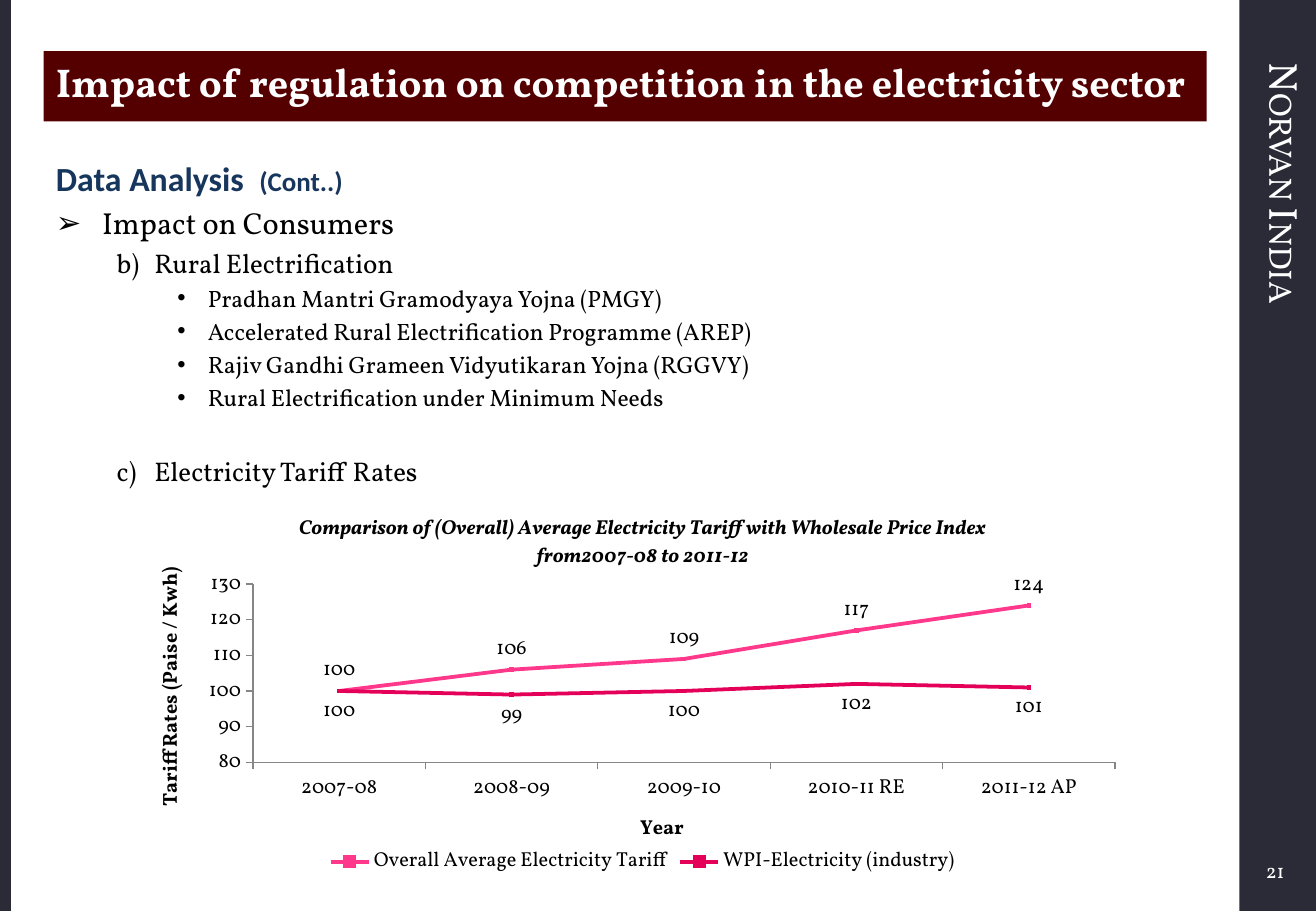
from dataclasses import dataclass

from lxml.etree import SubElement
from pptx import Presentation
from pptx.chart.data import CategoryChartData
from pptx.dml.color import RGBColor
from pptx.enum.chart import (XL_CHART_TYPE, XL_LABEL_POSITION, XL_LEGEND_POSITION,
                             XL_MARKER_STYLE, XL_TICK_MARK)
from pptx.enum.shapes import MSO_SHAPE
from pptx.enum.text import MSO_ANCHOR, MSO_AUTO_SIZE, PP_ALIGN
from pptx.oxml import parse_xml
from pptx.oxml.ns import nsdecls, qn
from pptx.util import Inches, Pt


@dataclass(frozen=True)
class Theme:
    font: str = "Vollkorn"
    heading_font: str = "Calibri"
    ink: RGBColor = RGBColor(0, 0, 0)
    white: RGBColor = RGBColor(255, 255, 255)
    bar: RGBColor = RGBColor(0x2B, 0x2B, 0x37)
    banner: RGBColor = RGBColor(0x54, 0, 0)
    heading: RGBColor = RGBColor(0x17, 0x36, 0x5D)
    axis: RGBColor = RGBColor(0x86, 0x86, 0x86)
    tariff: RGBColor = RGBColor(0xFF, 0x38, 0x8C)
    wholesale: RGBColor = RGBColor(0xE4, 0, 0x59)
    brand_size: float = 24
    title_size: float = 23.8
    heading_size: float = 20
    cont_size: float = 16
    level_sizes: tuple = (18, 16, 14)
    small_size: float = 12


THEME = Theme()

BRAND = "Norvan India"
PAGE = "21"
TITLE = "Impact of regulation on competition in the electricity sector"
HEADING, CONT = "Data Analysis  ", "(Cont..)"
OUTLINE = [  # level, bullet, text
    (0, "➢", "Impact on Consumers"),
    (1, None, "b)\tRural Electrification"),
    (2, "•", "Pradhan Mantri Gramodyaya Yojna (PMGY)"),
    (2, "•", "Accelerated Rural Electrification Programme (AREP)"),
    (2, "•", "Rajiv Gandhi Grameen Vidyutikaran Yojna (RGGVY)"),
    (2, "•", "Rural Electrification under Minimum Needs"),
    (1, None, "c)\tElectricity Tariff Rates"),
]
LEVEL_INDENTS = [(0.38, 0.38), (0.81, 0.31), (1.25, 0.25)]  # margin, hanging
SECTION_GAP = 25.5  # points above a section that follows a deeper list

CHART_TITLE = ("Comparison of (Overall) Average Electricity Tariff "
               "with Wholesale Price Index from2007-08 to 2011-12")
YEARS = ["2007-08", "2008-09", "2009-10", "2010-11 RE", "2011-12 AP"]
SERIES = [
    ("Overall Average Electricity Tariff", [100, 106, 109, 117, 124],
     THEME.tariff, XL_LABEL_POSITION.ABOVE),
    ("WPI-Electricity (industry)", [100, 99, 100, 102, 101],
     THEME.wholesale, XL_LABEL_POSITION.BELOW),
]
PLOT_AREA = {"x": 0.103, "y": 0.23, "w": 0.878, "h": 0.463}

WIDTH, HEIGHT = 10.83, 7.5
SIDEBAR, LEFT_STRIP = 0.63, 0.09
CONTENT_LEFT, CONTENT_WIDTH = 0.36, 9.57


def inches(*lengths):
    return [Inches(length) for length in lengths]


def style(font, size, color=THEME.ink, bold=False, italic=False, name=THEME.font):
    font.name, font.size = name, Pt(size)
    font.bold, font.italic = bold, italic
    font.color.rgb = color


def add_run(paragraph, text, *args, **kwargs):
    run = paragraph.add_run()
    run.text = text
    style(run.font, *args, **kwargs)
    return run


def set_bullet(paragraph, level, bullet):
    """Indent the paragraph for its level and give it a bullet, or none."""
    margin, hanging = LEVEL_INDENTS[level]
    paragraph.level = level
    properties = paragraph._p.get_or_add_pPr()
    properties.set("marL", str(Inches(margin)))
    properties.set("indent", str(-Inches(hanging)))
    if bullet:
        SubElement(properties, qn("a:buChar")).set("char", bullet)
    else:
        SubElement(properties, qn("a:buNone"))


def place(placeholder, top, height):
    placeholder.left, placeholder.top, placeholder.width, placeholder.height = inches(
        CONTENT_LEFT, top, CONTENT_WIDTH, height)
    frame = placeholder.text_frame
    frame.auto_size = MSO_AUTO_SIZE.NONE
    frame.vertical_anchor = MSO_ANCHOR.TOP
    return frame


def add_frame(slide):
    for left, width in ((WIDTH - SIDEBAR, SIDEBAR), (0, LEFT_STRIP)):
        strip = slide.shapes.add_shape(MSO_SHAPE.RECTANGLE, *inches(left, 0, width, HEIGHT))
        strip.shadow.inherit = False
        strip.fill.solid()
        strip.fill.fore_color.rgb = THEME.bar
        strip.line.fill.background()

    brand = slide.shapes.add_textbox(*inches(WIDTH - SIDEBAR, 0.42, SIDEBAR, 6.42)).text_frame
    brand.word_wrap = True
    brand._txBody.bodyPr.set("vert", "vert")
    run = add_run(brand.paragraphs[0], BRAND, THEME.brand_size, THEME.white)
    run._r.get_or_add_rPr().set("cap", "small")

    page = slide.shapes.add_textbox(*inches(9.5, 7, 1.17, 0.33)).text_frame
    page.word_wrap = True
    page.vertical_anchor = MSO_ANCHOR.MIDDLE
    page.paragraphs[0].alignment = PP_ALIGN.RIGHT
    add_run(page.paragraphs[0], PAGE, THEME.small_size, THEME.white)


def add_title(slide):
    banner = slide.shapes.title
    banner.fill.solid()
    banner.fill.fore_color.rgb = THEME.banner
    paragraph = place(banner, 0.42, 0.58).paragraphs[0]
    paragraph.alignment = PP_ALIGN.LEFT
    add_run(paragraph, TITLE, THEME.title_size, THEME.white, bold=True)


def add_outline(slide):
    frame = place(slide.placeholders[1], 1.25, 2.83)
    heading = frame.paragraphs[0]
    set_bullet(heading, 0, None)
    heading.space_before = Pt(0)
    for text, size in ((HEADING, THEME.heading_size), (CONT, THEME.cont_size)):
        add_run(heading, text, size, THEME.heading, bold=True, name=THEME.heading_font)

    previous_level = 0
    for level, bullet, text in OUTLINE:
        paragraph = frame.add_paragraph()
        set_bullet(paragraph, level, bullet)
        if level < previous_level:
            paragraph.space_before = Pt(SECTION_GAP)
        add_run(paragraph, text, THEME.level_sizes[level])
        previous_level = level


def set_plot_area(chart):
    """Fix the inner plot area as fractions of the chart."""
    plot_area = chart._chartSpace.chart.plotArea
    for automatic in plot_area.findall(qn("c:layout")):
        plot_area.remove(automatic)
    sizes = "".join(f'<c:{key} val="{value}"/>' for key, value in PLOT_AREA.items())
    plot_area.insert(0, parse_xml(
        f'<c:layout {nsdecls("c")}><c:manualLayout><c:layoutTarget val="inner"/>'
        f'<c:xMode val="edge"/><c:yMode val="edge"/>{sizes}</c:manualLayout></c:layout>'))


def add_tariff_chart(slide):
    data = CategoryChartData(number_format="0")
    data.categories = YEARS
    for name, values, *_ in SERIES:
        data.add_series(name, values)
    chart = slide.shapes.add_chart(
        XL_CHART_TYPE.LINE_MARKERS, *inches(1.25, 4.08, 8.08, 3.17), data).chart
    style(chart.font, THEME.small_size)
    add_run(chart.chart_title.text_frame.paragraphs[0], CHART_TITLE,
            THEME.small_size, bold=True, italic=True)
    chart.chart_title.include_in_layout = False
    chart.has_legend = True
    chart.legend.position = XL_LEGEND_POSITION.BOTTOM
    chart.legend.include_in_layout = False
    set_plot_area(chart)

    years, rates = chart.category_axis, chart.value_axis
    for axis, name in ((years, "Year"), (rates, "Tariff Rates (Paise / Kwh)")):
        add_run(axis.axis_title.text_frame.paragraphs[0], name, THEME.small_size, bold=True)
        axis.has_major_gridlines = False
        axis.major_tick_mark = XL_TICK_MARK.OUTSIDE
        axis.format.line.color.rgb = THEME.axis
    rates.axis_title.text_frame._txBody.bodyPr.set("rot", "-5400000")
    rates.minimum_scale, rates.maximum_scale, rates.major_unit = 80, 130, 10
    rates.tick_labels.number_format = "0"
    rates.tick_labels.number_format_is_linked = False

    plot = chart.plots[0]
    plot.vary_by_categories = False
    for series, (_, _, color, label_position) in zip(plot.series, SERIES):
        series.smooth = False
        series.format.line.color.rgb = color
        series.format.line.width = Pt(2.25)
        marker = series.marker
        marker.style, marker.size = XL_MARKER_STYLE.SQUARE, 2
        marker.format.fill.solid()
        marker.format.fill.fore_color.rgb = color
        marker.format.line.color.rgb = color
        labels = series.data_labels
        labels.show_value = True
        labels.position = label_position
        labels.number_format, labels.number_format_is_linked = "0", False


def main():
    deck = Presentation()
    deck.slide_width, deck.slide_height = inches(WIDTH, HEIGHT)
    slide = deck.slides.add_slide(deck.slide_layouts[1])
    add_frame(slide)
    add_title(slide)
    add_outline(slide)
    add_tariff_chart(slide)
    deck.save("out.pptx")


if __name__ == "__main__":
    main()
